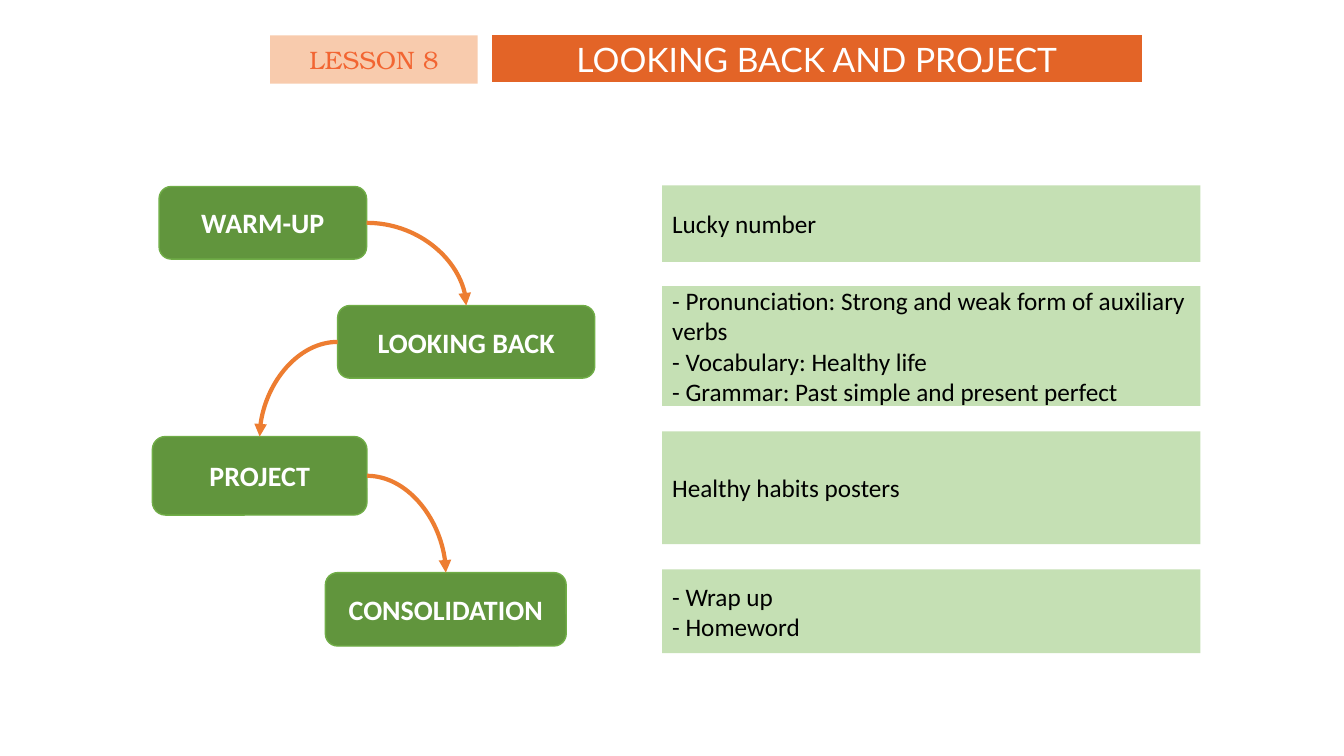
import pptx
import pptx.dml.color
import pptx.enum.shapes
import pptx.enum.text
import pptx.oxml
import pptx.oxml.ns
import pptx.util
from pptx.util import Cm

COLORS = {
    "stage": "61953D",
    "stage_line": "70AD47",
    "detail": "C5E0B4",
    "arrow": "ED7D31",
    "title": "E36427",
    "lesson": "F8CBAD",
    "lesson_text": "F26532",
    "white": "FFFFFF",
    "black": "000000",
}
DETAIL_LEFT, DETAIL_WIDTH = 16.69, 13.56
RECTANGLE = pptx.enum.shapes.MSO_SHAPE.RECTANGLE
ROUNDED = pptx.enum.shapes.MSO_SHAPE.ROUNDED_RECTANGLE
LEFT = pptx.enum.text.PP_ALIGN.LEFT
CENTER = pptx.enum.text.PP_ALIGN.CENTER
RIGHT_SITE, LEFT_SITE, TOP_SITE = 3, 1, 0


def rgb(name):
    return pptx.dml.color.RGBColor.from_string(COLORS[name])


def add_box(kind, box, text, fill, color, size, font="Calibri", bold=False,
            align=CENTER, line=None, line_width=1):
    """Add a filled shape with uniformly formatted text; box is in centimetres."""
    shape = slide.shapes.add_shape(kind, *[Cm(value) for value in box])
    shape.shadow.inherit = False
    shape.fill.solid()
    shape.fill.fore_color.rgb = rgb(fill)
    if line:
        shape.line.color.rgb = rgb(line)
        shape.line.width = pptx.util.Pt(line_width)
    else:
        shape.line.fill.background()
    shape.text_frame.text = text
    for paragraph in shape.text_frame.paragraphs:
        paragraph.alignment = align
        for run in paragraph.runs:
            run.font.name = font
            run.font.size = pptx.util.Pt(size)
            run.font.bold = bold
            run.font.color.rgb = rgb(color)
    return shape


presentation = pptx.Presentation()
presentation.slide_width = Cm(33.87)
presentation.slide_height = Cm(19.05)
slide = presentation.slides.add_slide(presentation.slide_layouts[6])

# Heading
add_box(RECTANGLE, (12.37, 0.86, 16.43, 1.24), "LOOKING BACK AND PROJECT",
        "title", "white", 24, font="Lato", line="white", line_width=1.5)
add_box(RECTANGLE, (6.81, 0.89, 5.23, 1.22), "LESSON 8",
        "lesson", "lesson_text", 18, font="TeX Gyre Bonum")

# Each stage: name, box, then top, height and text of its detail panel
stages = [
    ("WARM-UP", (4.01, 4.7, 5.23, 1.83), 4.67, 1.93, "Lucky number"),
    ("LOOKING BACK", (8.51, 7.7, 6.48, 1.83), 7.21, 3.02,
     "- Pronunciation: Strong and weak form of auxiliary verbs\n"
     "- Vocabulary: Healthy life\n"
     "- Grammar: Past simple and present perfect"),
    ("PROJECT", (3.84, 11, 5.41, 1.98), 10.87, 2.84, "Healthy habits posters"),
    ("CONSOLIDATION", (8.2, 14.43, 6.07, 1.85), 14.35, 2.11,
     "- Wrap up\n- Homeword"),
]
stage_shapes = []
for name, box, top, height, detail in stages:
    stage_shapes.append(add_box(ROUNDED, box, name, "stage", "white", 20,
                                bold=True, line="stage_line"))
    add_box(RECTANGLE, (DETAIL_LEFT, top, DETAIL_WIDTH, height), detail,
            "detail", "black", 18, align=LEFT)

# Curved arrows from the side of each stage to the top of the next
for start, end in zip(stage_shapes, stage_shapes[1:]):
    arrow = slide.shapes.add_connector(
        pptx.enum.shapes.MSO_CONNECTOR.CURVE, 0, 0, 0, 0)
    arrow.begin_connect(start, RIGHT_SITE if end.left > start.left else LEFT_SITE)
    arrow.end_connect(end, TOP_SITE)
    arrow.line.color.rgb = rgb("arrow")
    arrow.line.width = pptx.util.Pt(3)
    properties = arrow.element.spPr
    properties.find(pptx.oxml.ns.qn("a:prstGeom")).set("prst", "curvedConnector2")
    namespace = pptx.oxml.ns.nsdecls("a")
    arrow.line._get_or_add_ln().append(
        pptx.oxml.parse_xml(f'<a:tailEnd {namespace} type="triangle"/>'))
    properties.append(pptx.oxml.parse_xml(f"<a:effectLst {namespace}/>"))

presentation.save("out.pptx")
